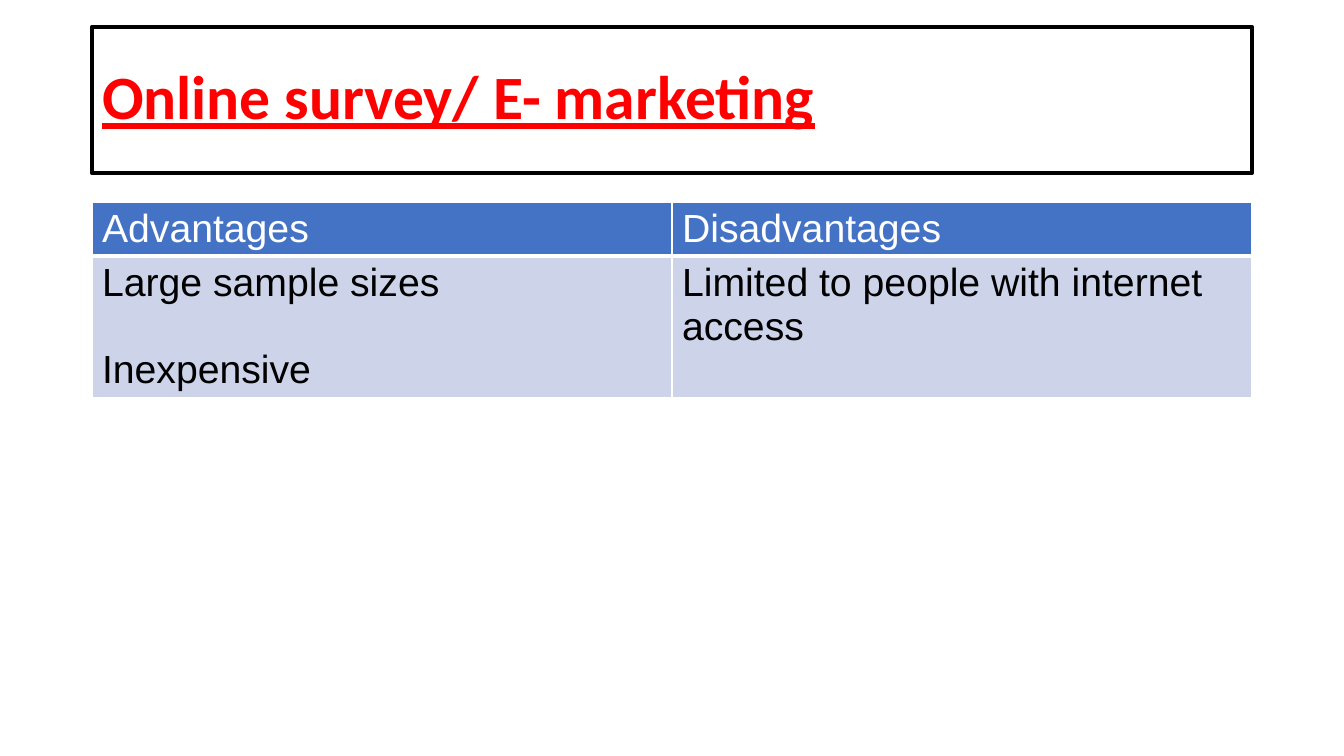
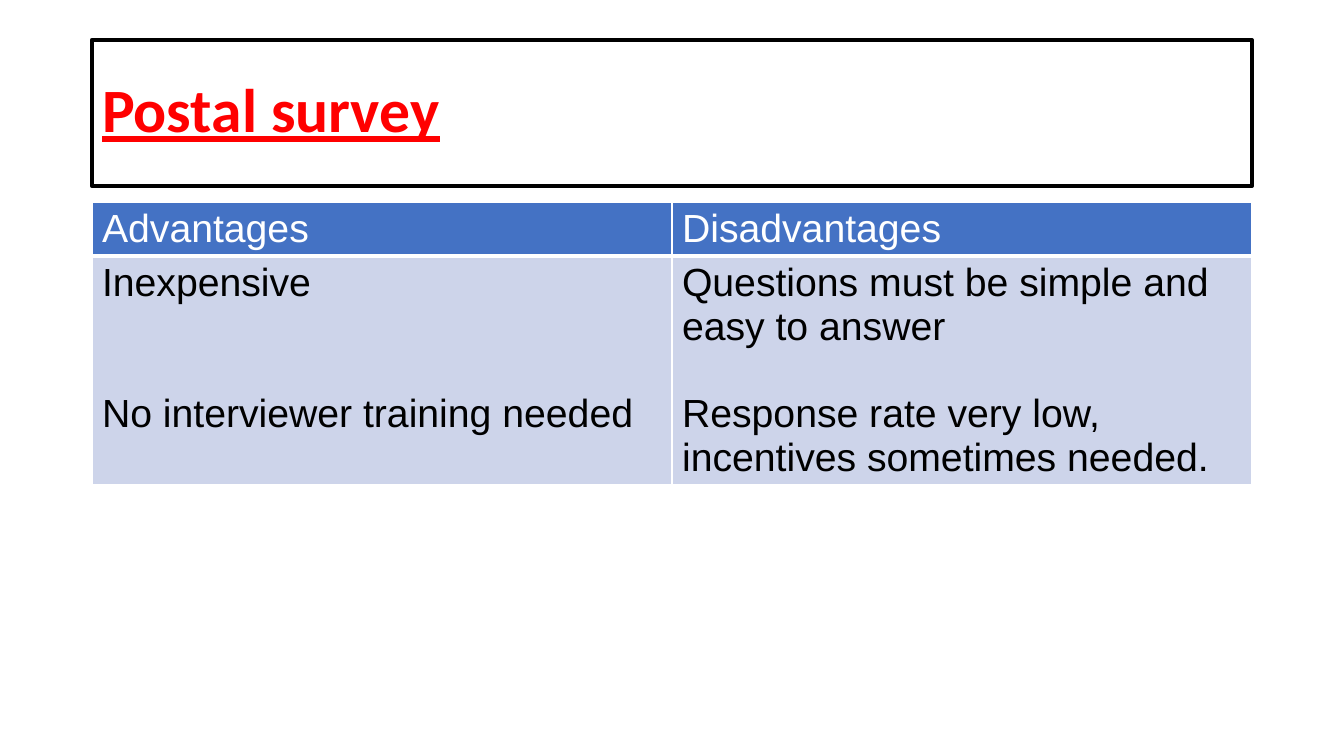
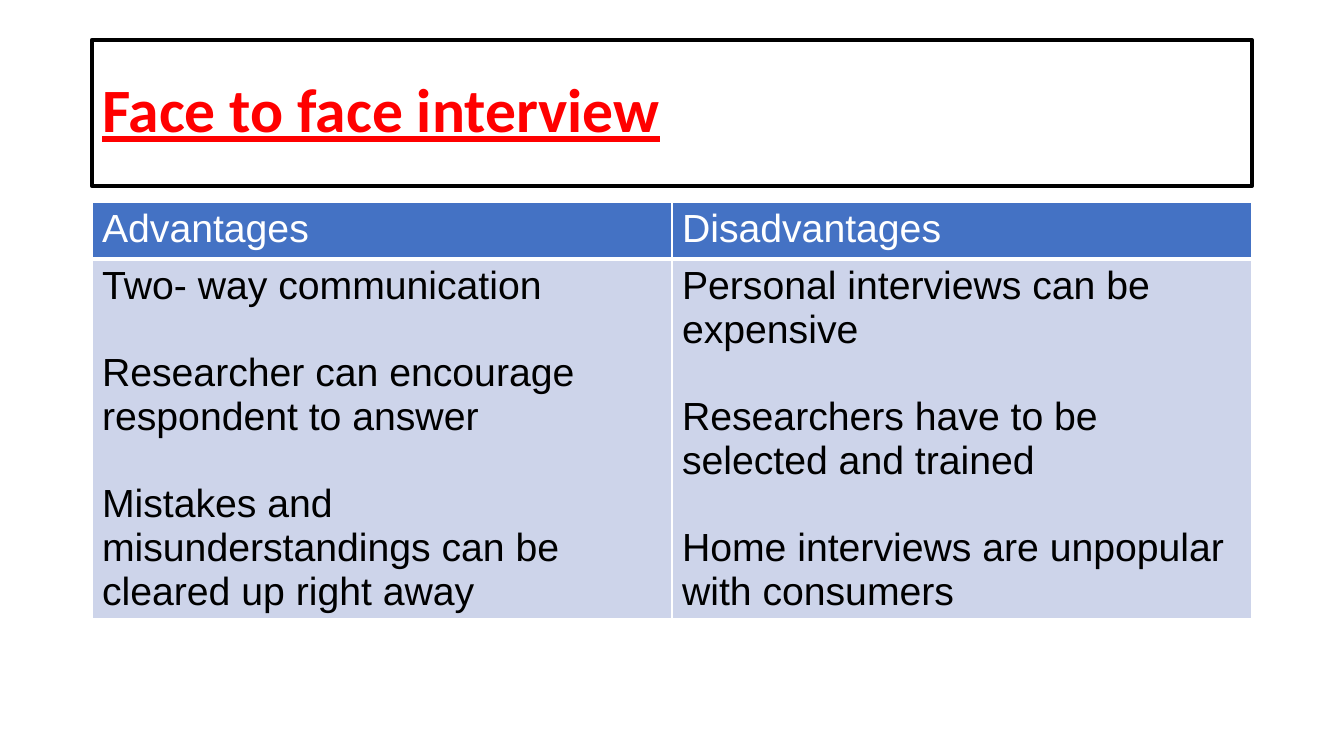
from lxml.etree import SubElement
from pptx import Presentation
from pptx.dml.color import RGBColor
from pptx.enum.text import MSO_ANCHOR, MSO_AUTO_SIZE, PP_ALIGN
from pptx.oxml.ns import qn
from pptx.util import Emu, Pt

HEADINGS = ("Advantages", "Disadvantages")

# Each column lists its points as (text, empty lines above it).
SURVEYS = [
    {
        "title": "Online survey/ E- marketing", "title_top": 27, "rows": (54, 140),
        "columns": (
            [("Large sample sizes", 0), ("Inexpensive", 1)],
            [("Limited to people with internet access", 0)],
        ),
    },
    {
        "title": "Postal survey", "title_top": 40, "rows": (54, 228),
        "columns": (
            [("Inexpensive", 0), ("No interviewer training needed", 2)],
            [("Questions must be simple and easy to answer", 0),
             ("Response rate very low, incentives sometimes needed.", 1)],
        ),
    },
    {
        "title": "Face to face interview", "title_top": 40, "rows": (57, 358),
        "columns": (
            [("Two- way communication", 0),
             ("Researcher can encourage respondent to answer", 1),
             ("Mistakes and misunderstandings can be cleared up right away", 1)],
            [("Personal interviews can be expensive", 0),
             ("Researchers have to be selected and trained", 1),
             ("Home interviews are unpopular with consumers", 1)],
        ),
    },
]

SLIDE_WIDTH, SLIDE_HEIGHT = 1344, 756
LEFT, WIDTH = 92, 1160
TITLE_HEIGHT, TABLE_TOP = 146, 202
LINE_HEIGHT = 31.2  # points, one line of table text

WHITE, BLACK, RED = "FFFFFF", "000000", "FF0000"
HEADER_FILL, BODY_FILL = "4472C4", "CDD4EA"


def px(length):
    return Emu(round(length * 12192000 / SLIDE_WIDTH))


def color(value):
    return RGBColor.from_string(value)


def set_font(font, name, size, value, bold):
    font.name, font.size, font.bold = name, Pt(size), bold
    font.color.rgb = color(value)


def add_title(page, text, top):
    box = page.shapes.title
    box.left, box.top, box.width, box.height = map(px, (LEFT, top, WIDTH, TITLE_HEIGHT))
    box.line.color.rgb = color(BLACK)
    box.line.width = Pt(3)
    frame = box.text_frame
    frame.text = text
    frame.auto_size = MSO_AUTO_SIZE.NONE
    frame.vertical_anchor = MSO_ANCHOR.MIDDLE
    para = frame.paragraphs[0]
    para.alignment = PP_ALIGN.LEFT
    para.line_spacing = 0.9
    set_font(para.font, "Calibri", 44, RED, True)
    para.font.underline = True


def set_borders(cell, top, bottom):
    """Draw white cell edges; top and bottom are widths in points."""
    properties = cell._tc.get_or_add_tcPr()
    for edge, width in (("L", 1), ("R", 1), ("T", top), ("B", bottom)):
        line = SubElement(properties, qn(f"a:ln{edge}"), w=str(Pt(width)))
        SubElement(SubElement(line, qn("a:solidFill")), qn("a:srgbClr"), val=WHITE)


def fill_cell(cell, points, fill, text_color):
    cell.fill.solid()
    cell.fill.fore_color.rgb = color(fill)
    frame = cell.text_frame
    for index, (text, gap) in enumerate(points):
        para = frame.add_paragraph() if index else frame.paragraphs[0]
        para.text = text
        para.space_before = Pt(gap * LINE_HEIGHT)
        set_font(para.font, "Arial", 28, text_color, False)


def add_comparison(page, columns, heights):
    table = page.shapes.add_table(
        2, len(columns), px(LEFT), px(TABLE_TOP), px(WIDTH), px(sum(heights))).table
    table.horz_banding = False
    for row, height in zip(table.rows, heights):
        row.height = px(height)
    for index, (heading, points) in enumerate(zip(HEADINGS, columns)):
        header, body = table.cell(0, index), table.cell(1, index)
        set_borders(header, 1, 3)
        set_borders(body, 3, 1)
        fill_cell(header, [(heading, 0)], HEADER_FILL, WHITE)
        fill_cell(body, points, BODY_FILL, BLACK)


def main():
    deck = Presentation()
    deck.slide_width, deck.slide_height = px(SLIDE_WIDTH), px(SLIDE_HEIGHT)
    for survey in SURVEYS:
        page = deck.slides.add_slide(deck.slide_layouts[5])
        add_title(page, survey["title"], survey["title_top"])
        add_comparison(page, survey["columns"], survey["rows"])
    deck.save("out.pptx")


if __name__ == "__main__":
    main()
